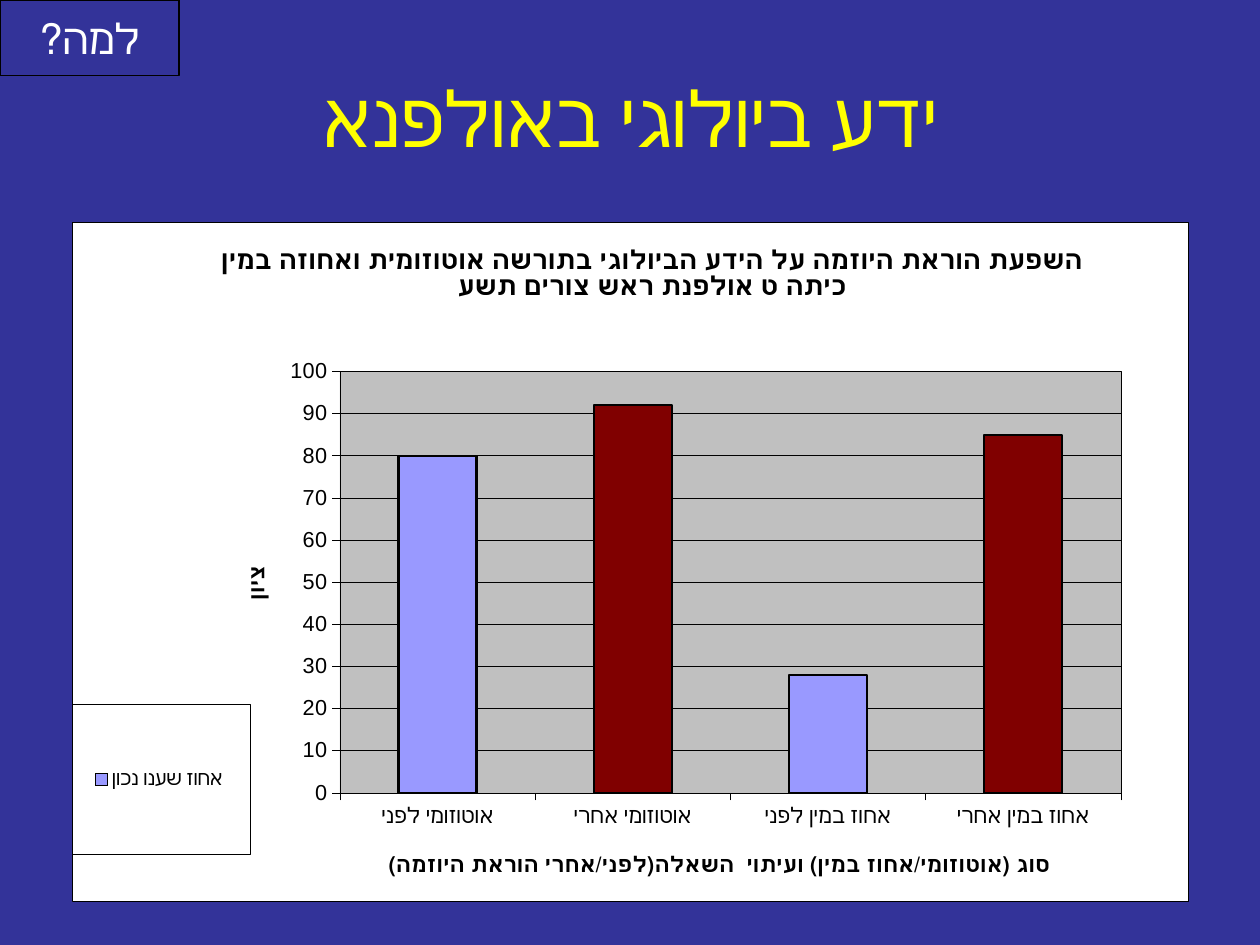
from lxml import etree
from pptx import Presentation
from pptx.chart.data import CategoryChartData
from pptx.dml.color import RGBColor
from pptx.enum.chart import XL_CHART_TYPE, XL_LEGEND_POSITION, XL_TICK_MARK
from pptx.enum.shapes import MSO_SHAPE
from pptx.enum.text import MSO_ANCHOR, PP_ALIGN
from pptx.oxml import parse_xml
from pptx.oxml.ns import nsdecls, qn
from pptx.util import Inches, Pt

COLUMN = XL_CHART_TYPE.COLUMN_CLUSTERED
RIGHT = XL_LEGEND_POSITION.RIGHT
OUTSIDE, NO_TICK = XL_TICK_MARK.OUTSIDE, XL_TICK_MARK.NONE
RECT = MSO_SHAPE.RECTANGLE
MIDDLE, CENTER = MSO_ANCHOR.MIDDLE, PP_ALIGN.CENTER

BLUE = RGBColor(0x33, 0x33, 0x99)
YELLOW = RGBColor(0xFF, 0xFF, 0x00)
WHITE = RGBColor(0xFF, 0xFF, 0xFF)
BLACK = RGBColor(0, 0, 0)
GRAY = RGBColor(0xC0, 0xC0, 0xC0)
LILAC = RGBColor(0x99, 0x99, 0xFF)
MAROON = RGBColor(0x80, 0, 0)

FONT = "Arial"
HAIR = Pt(0.33)
BEFORE_AFTER = (
    ("אוטוזומי לפני", 80, LILAC),
    ("אוטוזומי אחרי", 92, MAROON),
    ("אחוז במין לפני", 28, LILAC),
    ("אחוז במין אחרי", 85, MAROON),
)


def set_font(font, size, color, bold=False):
    font.name, font.size, font.bold = FONT, Pt(size), bold
    font.color.rgb = color


def write(frame, text, size, color):
    """Put one centred right-to-left paragraph in the frame."""
    frame.text = text
    frame.vertical_anchor = MIDDLE
    par = frame.paragraphs[0]
    par.alignment = CENTER
    par._p.get_or_add_pPr().set("rtl", "1")
    set_font(par.font, size, color)


def set_line(line, color, width):
    line.color.rgb = color
    line.width = width


def place(part, x, y, w=None, h=None, inner=False):
    """Set a manual layout, in fractions of the chart."""
    for old in part.findall(qn("c:layout")):
        part.remove(old)
    layout = etree.Element(qn("c:layout"))
    manual = etree.SubElement(layout, qn("c:manualLayout"))
    rows = [("xMode", "edge"), ("yMode", "edge"), ("x", x), ("y", y)]
    if inner:
        rows.insert(0, ("layoutTarget", "inner"))
    if w:
        rows += [("w", w), ("h", h)]
    for tag, val in rows:
        etree.SubElement(manual, qn("c:" + tag)).set("val", str(val))
    overlay = part.find(qn("c:overlay"))
    if overlay is None:
        part.insert(0, layout)
    else:
        overlay.addprevious(layout)


def box_style(fill, line):
    """Make the shape properties of a chart part with a hairline border."""
    return parse_xml(
        f'<c:spPr {nsdecls("c", "a")}>'
        f'<a:solidFill><a:srgbClr val="{fill}"/></a:solidFill>'
        f'<a:ln w="{int(HAIR)}"><a:solidFill><a:srgbClr val="{line}"/>'
        "</a:solidFill></a:ln></c:spPr>"
    )


def add_caption(owner, text, size, x, y, turn=0):
    """Give a chart or an axis its bold title; turn is in degrees."""
    owner.has_title = True
    title = owner.chart_title if hasattr(owner, "chart_title") else owner.axis_title
    frame = title.text_frame
    frame.text = text
    for par in frame.paragraphs:
        par._p.get_or_add_pPr().set("rtl", "1")
        set_font(par.font, size, BLACK, bold=True)
    body = title._element.find(".//" + qn("a:bodyPr"))
    body.set("rot", str(turn * 60000))
    body.set("vert", "horz")
    place(title._element, x, y)


def style_axis(axis):
    axis.major_tick_mark, axis.minor_tick_mark = OUTSIDE, NO_TICK
    set_font(axis.tick_labels.font, 12.4, BLACK)
    set_line(axis.format.line, BLACK, HAIR)


def style_legend(chart):
    chart.has_legend = True
    legend = chart.legend
    legend.position = RIGHT
    legend.include_in_layout = False
    set_font(legend.font, 11.4, BLACK)
    part = legend._element
    place(part, 0, 0.71, 0.16, 0.22)
    part.find(qn("c:overlay")).addnext(box_style(WHITE, BLACK))


def style_bars(chart):
    plot = chart.plots[0]
    plot.gap_width = 150
    plot.vary_by_categories = False
    bars = plot.series[0]
    bars.format.fill.solid()
    bars.format.fill.fore_color.rgb = LILAC
    set_line(bars.format.line, BLACK, Pt(1.31))
    for i, (_, _, color) in enumerate(BEFORE_AFTER):
        if color != LILAC:
            look = bars.points[i].format
            look.fill.solid()
            look.fill.fore_color.rgb = color
            set_line(look.line, BLACK, Pt(1.31))


def add_score_chart(slide):
    data = CategoryChartData()
    data.categories = [name for name, _, _ in BEFORE_AFTER]
    data.add_series("אחוז שענו נכון ", [score for _, score, _ in BEFORE_AFTER])
    chart = slide.shapes.add_chart(
        COLUMN, Inches(0.57), Inches(1.76), Inches(8.86), Inches(5.4), data
    ).chart
    set_font(chart.font, 12.4, BLACK)
    style_bars(chart)

    cats, vals = chart.category_axis, chart.value_axis
    for axis in (cats, vals):
        style_axis(axis)
    vals.minimum_scale, vals.maximum_scale, vals.major_unit = 0, 100, 10
    vals.has_major_gridlines = True
    set_line(vals.major_gridlines.format.line, BLACK, HAIR)

    add_caption(
        chart,
        "השפעת הוראת היוזמה על הידע הביולוגי בתורשה אוטוזומית ואחוזה במין\n"
        "כיתה ט אולפנת ראש צורים תשע",
        14.9, 0.13, 0.03,
    )
    add_caption(
        cats, "סוג (אוטוזומי/אחוז במין) ועיתוי  השאלה(לפני/אחרי הוראת היוזמה)",
        12.4, 0.28, 0.92,
    )
    add_caption(vals, "ציון", 12.4, 0.15, 0.5, turn=-90)
    style_legend(chart)

    root = chart._chartSpace.find(qn("c:chart"))
    area = root.find(qn("c:plotArea"))
    place(area, 0.24, 0.22, 0.7, 0.62, inner=True)
    area.append(box_style(GRAY, BLACK))
    root.addnext(box_style(WHITE, BLACK))


def add_title(slide, text):
    title = slide.shapes.title
    title.left, title.top = Inches(0.5), Inches(0.3)
    title.width, title.height = Inches(9), Inches(1.25)
    write(title.text_frame, text, 44, YELLOW)


def add_tag(slide, text):
    tag = slide.shapes.add_shape(RECT, 0, 0, Inches(1.42), Inches(0.6))
    tag.shadow.inherit = False
    tag.fill.solid()
    tag.fill.fore_color.rgb = BLUE
    set_line(tag.line, BLACK, Pt(0.75))
    tag.text_frame.word_wrap = False
    write(tag.text_frame, text, 24, WHITE)


def main():
    deck = Presentation()
    deck.slide_width, deck.slide_height = Inches(10), Inches(7.5)
    slide = deck.slides.add_slide(deck.slide_layouts[5])
    slide.background.fill.solid()
    slide.background.fill.fore_color.rgb = BLUE
    add_title(slide, "ידע ביולוגי באולפנא")
    add_score_chart(slide)
    add_tag(slide, "למה?")
    deck.save("out.pptx")


if __name__ == "__main__":
    main()
